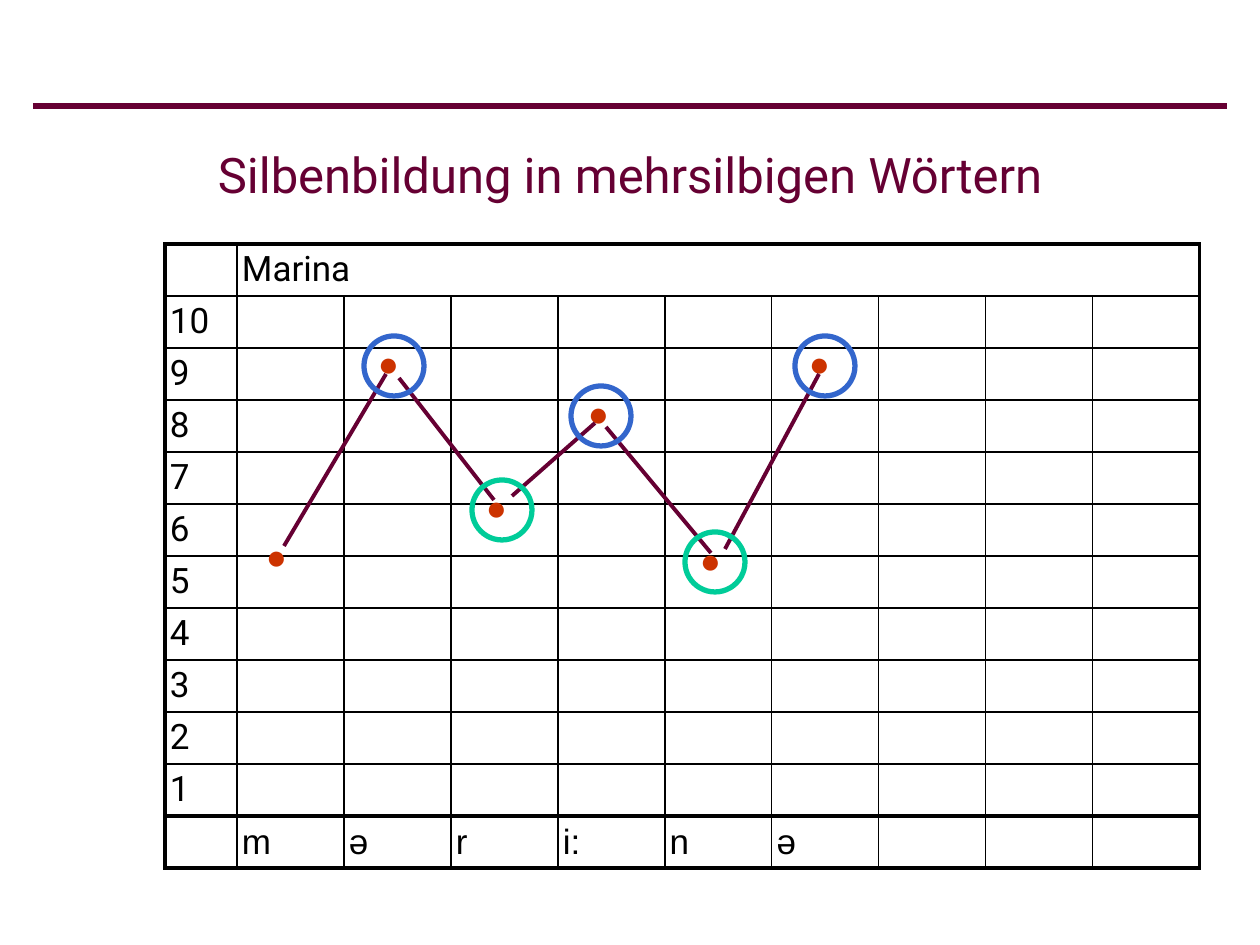
import pptx
import pptx.dml.color
import pptx.enum.shapes
import pptx.enum.text
import pptx.oxml.ns
import pptx.util
from lxml import etree

SCALE = 914400 / 126
WINE, BLACK, RED = "660033", "000000", "CC3300"
BLUE, GREEN = "3366CC", "00CC99"
LABEL_SIZE = 20
LEVELS = range(10, 0, -1)
SOUNDS = ["m", "ə", "r", "i:", "n", "ə"]
PEAKS = [(199, 92), (406, 142), (630, 92)]
VALLEYS = [(307, 236), (520, 288)]
DOTS = [(101, 295), (213, 102), (321, 246), (423, 152), (535, 299), (644, 102)]
SLOPES = [
    (234, 134, 329, 256),
    (347, 252, 430, 179),
    (546, 309, 441, 183),
    (221, 130, 119, 302),
    (560, 305, 654, 130),
]


def px(*lengths):
    """Turn pixel lengths into a list of EMU."""
    return [pptx.util.Emu(round(length * SCALE)) for length in lengths]


def colour(value):
    """Turn a hex string into an RGB colour."""
    return pptx.dml.color.RGBColor.from_string(value)


def apply(target, values):
    """Set every attribute named in a dict of format values."""
    for name, value in values.items():
        setattr(target, name, value)


def write(frame, text, size, font, ink, **layout):
    """Write one formatted paragraph into a text frame."""
    paragraph = frame.paragraphs[0]
    run = paragraph.add_run()
    run.text = text
    apply(paragraph, layout)
    apply(run.font, {"size": pptx.util.Pt(size), "name": font})
    run.font.color.rgb = colour(ink)


def add_text_box(shapes, box, inset, text, size, font, ink, frame_format, **layout):
    """Place a text box with even horizontal and vertical insets."""
    frame = shapes.add_textbox(*px(*box)).text_frame
    across, down = px(*inset)
    apply(frame, {"margin_left": across, "margin_right": across,
                  "margin_top": down, "margin_bottom": down,
                  "word_wrap": True, **frame_format})
    write(frame, text, size, font, ink, **layout)


def add_line(shapes, ends, width):
    """Draw a straight wine-red line without shadow."""
    line = shapes.add_connector(pptx.enum.shapes.MSO_CONNECTOR.STRAIGHT, *px(*ends))
    line.line.color.rgb = colour(WINE)
    line.line.width = pptx.util.Pt(width)
    properties = line._element.spPr
    etree.SubElement(properties, pptx.oxml.ns.qn("a:effectLst"))


def add_heading(shapes, left, top, width, height):
    """Place the rule and the centred title below it."""
    add_line(shapes, (left, top, left + width, top), 3)
    add_text_box(shapes, (left, top, width, height), (13, 6),
                 "Silbenbildung in mehrsilbigen Wörtern", 28, "Roboto", WINE,
                 {"vertical_anchor": pptx.enum.text.MSO_ANCHOR.MIDDLE},
                 alignment=pptx.enum.text.PP_ALIGN.CENTER)


def add_borders(cell, thick):
    """Draw the four cell borders, heavier on the sides in thick."""
    properties = cell._tc.get_or_add_tcPr()
    for side in "LRTB":
        width = pptx.util.Pt(2.25 if side in thick else 1)
        border = etree.SubElement(properties, pptx.oxml.ns.qn(f"a:ln{side}"), w=str(width))
        fill = etree.SubElement(border, pptx.oxml.ns.qn("a:solidFill"))
        etree.SubElement(fill, pptx.oxml.ns.qn("a:srgbClr"), val=BLACK)


def add_sonority_grid(shapes, left, top, label_width, sound_width, row_height):
    """Place the table of sonority levels over the sounds of the word."""
    rows, columns = len(LEVELS) + 2, 10
    width = label_width + (columns - 1) * sound_width
    grid = shapes.add_table(rows, columns, *px(left, top, width, rows * row_height)).table
    apply(grid, {"first_row": False, "horz_banding": False})
    for index, column in enumerate(grid.columns):
        column.width = px(sound_width if index else label_width)[0]
    for row in grid.rows:
        row.height = px(row_height)[0]

    labels = {(0, 1): "Marina"}
    labels.update({(row, 0): str(level) for row, level in enumerate(LEVELS, 1)})
    labels.update({(rows - 1, column): sound for column, sound in enumerate(SOUNDS, 1)})
    margin = px(5)[0]
    for row in range(rows):
        for column in range(columns):
            cell = grid.cell(row, column)
            edges = {"L": column == 0, "R": column == columns - 1 or (row, column) == (0, 1),
                     "T": row in (0, rows - 1), "B": row >= rows - 2}
            add_borders(cell, [side for side, outer in edges.items() if outer])
            cell.fill.background()
            apply(cell, {"margin_left": margin, "margin_right": margin,
                         "margin_top": margin, "margin_bottom": margin,
                         "vertical_anchor": pptx.enum.text.MSO_ANCHOR.MIDDLE})
            if (row, column) in labels:
                font = "Arial" if row == rows - 1 else "Roboto"
                write(cell.text_frame, labels[row, column], LABEL_SIZE, font, BLACK)
            else:
                cell.text_frame.paragraphs[0].font.size = pptx.util.Pt(LABEL_SIZE)
    grid.cell(0, 1).merge(grid.cell(0, columns - 1))


def add_sonority_curve(shapes, left, top):
    """Place dots, slopes and rings over the grid."""
    curve = shapes.add_group_shape().shapes
    for x, y in DOTS:
        add_text_box(curve, (left + x, top + y, 35, 38), (0, 0), "●", 20, "Arial", RED,
                     {"auto_size": pptx.enum.text.MSO_AUTO_SIZE.SHAPE_TO_FIT_TEXT},
                     line_spacing=0.9)
    for x1, y1, x2, y2 in SLOPES:
        add_line(curve, (left + x1, top + y1, left + x2, top + y2), 2.25)
    for places, ink in ((PEAKS, BLUE), (VALLEYS, GREEN)):
        for x, y in places:
            ring = shapes.add_shape(pptx.enum.shapes.MSO_SHAPE.OVAL,
                                    *px(left + x, top + y, 60, 60))
            ring.shadow.inherit = False
            ring.fill.background()
            ring.line.color.rgb = colour(ink)
            ring.line.width = pptx.util.Pt(3)


def main():
    """Build and save the slide."""
    deck = pptx.Presentation()
    deck.slide_width, deck.slide_height = px(1260, 945)
    shapes = deck.slides.add_slide(deck.slide_layouts[6]).shapes
    add_heading(shapes, 33, 106, 1194, 136)
    add_sonority_grid(shapes, 165, 244, 72, 107, 48)
    add_sonority_curve(shapes, 165, 244)
    deck.save("out.pptx")


if __name__ == "__main__":
    main()
